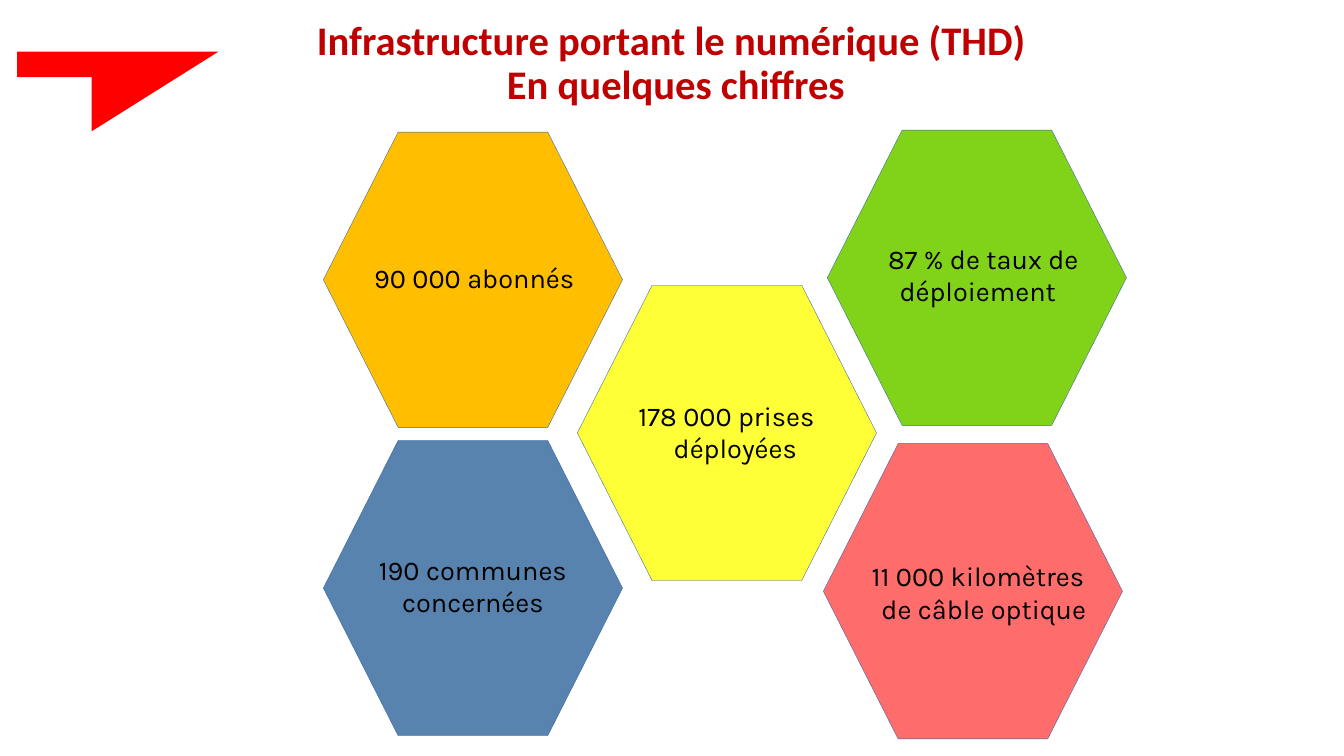
import pptx
import pptx.dml.color
import pptx.enum.shapes
import pptx.enum.text
import pptx.util

Cm = pptx.util.Cm
Pt = pptx.util.Pt
RGB = pptx.dml.color.RGBColor
ALIGN = pptx.enum.text.PP_ALIGN
ANCHOR = pptx.enum.text.MSO_ANCHOR

RED = RGB(0xFF, 0x00, 0x00)
DARK = RGB(0xC0, 0x00, 0x00)
AMBER = RGB(0xFF, 0xBE, 0x00)
CORAL = RGB(0xFF, 0x6C, 0x6C)
YELLOW = RGB(0xFF, 0xFF, 0x38)
GREEN = RGB(0x81, 0xD3, 0x1A)
BLUE = RGB(0x58, 0x83, 0xAF)
EDGE = RGB(0x34, 0x64, 0xA3)
BLACK = RGB(0x00, 0x00, 0x00)

HEX_W, HEX_H = 7.54, 7.44

# Hexagon left, top, fill; label left, top, width, height inside it;
# alignment; lines as (text, margin, first indent)
CELLS = [
    (8.15, 3.33, AMBER, (0.97, 3.25, 5.64, 0.86), ALIGN.CENTER,
     [("90 000 abonnés", 0.03, 0)]),
    (20.75, 11.18, CORAL, (0.81, 2.92, 6.15, 1.68), ALIGN.CENTER,
     [("11 000 kilomètres", 0.03, 0), ("de câble optique", 0.33, 0)]),
    (14.55, 7.19, YELLOW, (1.52, 2.87, 5.16, 1.68), ALIGN.LEFT,
     [("178 000 prises déployées", 0.91, -0.89)]),
    (20.85, 3.28, GREEN, (1.09, 2.82, 5.38, 1.68), ALIGN.CENTER,
     [("87 % de taux de déploiement", 0.03, 0.28)]),
    (8.15, 11.1, BLUE, (1.09, 2.84, 5.36, 1.68), ALIGN.CENTER,
     [("190 communes", 0, 0), ("concernées", 0, 0)]),
]


def add_text(slide, box, lines, align, anchor, face, size, color, bold=False):
    """Add a text box without insets and return its paragraphs."""
    frame = slide.shapes.add_textbox(*map(Cm, box)).text_frame
    frame.word_wrap = True
    frame.vertical_anchor = anchor
    frame.margin_left = frame.margin_right = 0
    frame.margin_top = frame.margin_bottom = 0
    frame.text = "\n".join(line[0] for line in lines)
    for par, (_, margin, indent) in zip(frame.paragraphs, lines):
        props = par._p.get_or_add_pPr()
        props.set("marL", str(Cm(margin)))
        props.set("indent", str(Cm(indent)))
        par.alignment = align
        for run in par.runs:
            run.font.name = face
            run.font.size = Pt(size)
            run.font.bold = bold
            run.font.color.rgb = color
    return frame.paragraphs


def add_arrow(slide, left, top, width, height):
    neck, shaft = 0.37 * width, 0.32 * height
    points = [(width, 0), (0, 0), (0, shaft), (neck, shaft), (neck, height)]
    spots = [(Cm(left + x), Cm(top + y)) for x, y in points]
    pen = slide.shapes.build_freeform(*spots[0])
    pen.add_line_segments(spots[1:], close=True)
    arrow = pen.convert_to_shape()
    arrow.shadow.inherit = False
    arrow.fill.solid()
    arrow.fill.fore_color.rgb = RED
    arrow.line.fill.background()


def add_cell(slide, left, top, color, label, align, lines):
    """Add one hexagon with its key figure."""
    cell = slide.shapes.add_shape(
        pptx.enum.shapes.MSO_SHAPE.HEXAGON,
        Cm(left), Cm(top), Cm(HEX_W), Cm(HEX_H))
    cell.adjustments[0] = 0.25 * HEX_W / HEX_H
    cell.shadow.inherit = False
    cell.fill.solid()
    cell.fill.fore_color.rgb = color
    cell.line.color.rgb = EDGE
    cell.line.width = Pt(0.25)
    x, y, width, height = label
    add_text(slide, (left + x, top + y, width, height), lines, align,
             ANCHOR.TOP, "Karla", 19.4, BLACK)


def add_title(slide, box):
    lines = [("Infrastructure portant le numérique (THD)", 0, 0),
             ("En quelques chiffres", 0.23, 0)]
    for par in add_text(slide, box, lines, ALIGN.CENTER, ANCHOR.MIDDLE,
                        "Calibri", 29, DARK, True):
        par.line_spacing = 0.9


def main():
    deck = pptx.Presentation()
    deck.slide_width, deck.slide_height = Cm(33.87), Cm(19.05)
    slide = deck.slides.add_slide(deck.slide_layouts[6])
    add_arrow(slide, 0.43, 1.3, 5.08, 2.01)
    for cell in CELLS:
        add_cell(slide, *cell)
    add_title(slide, (-0.03, -0.05, 33.91, 3.33))
    deck.save("out.pptx")


if __name__ == "__main__":
    main()
